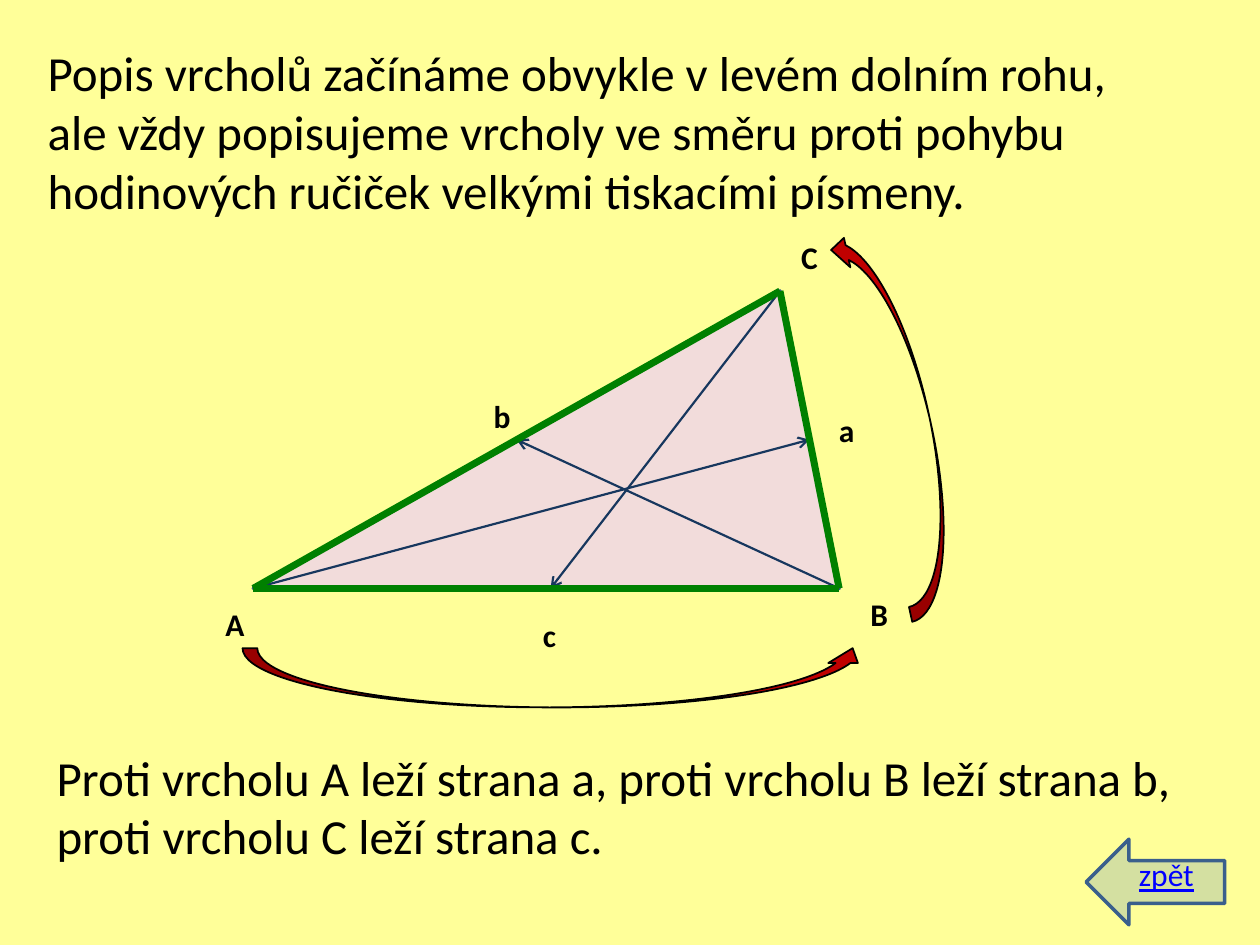
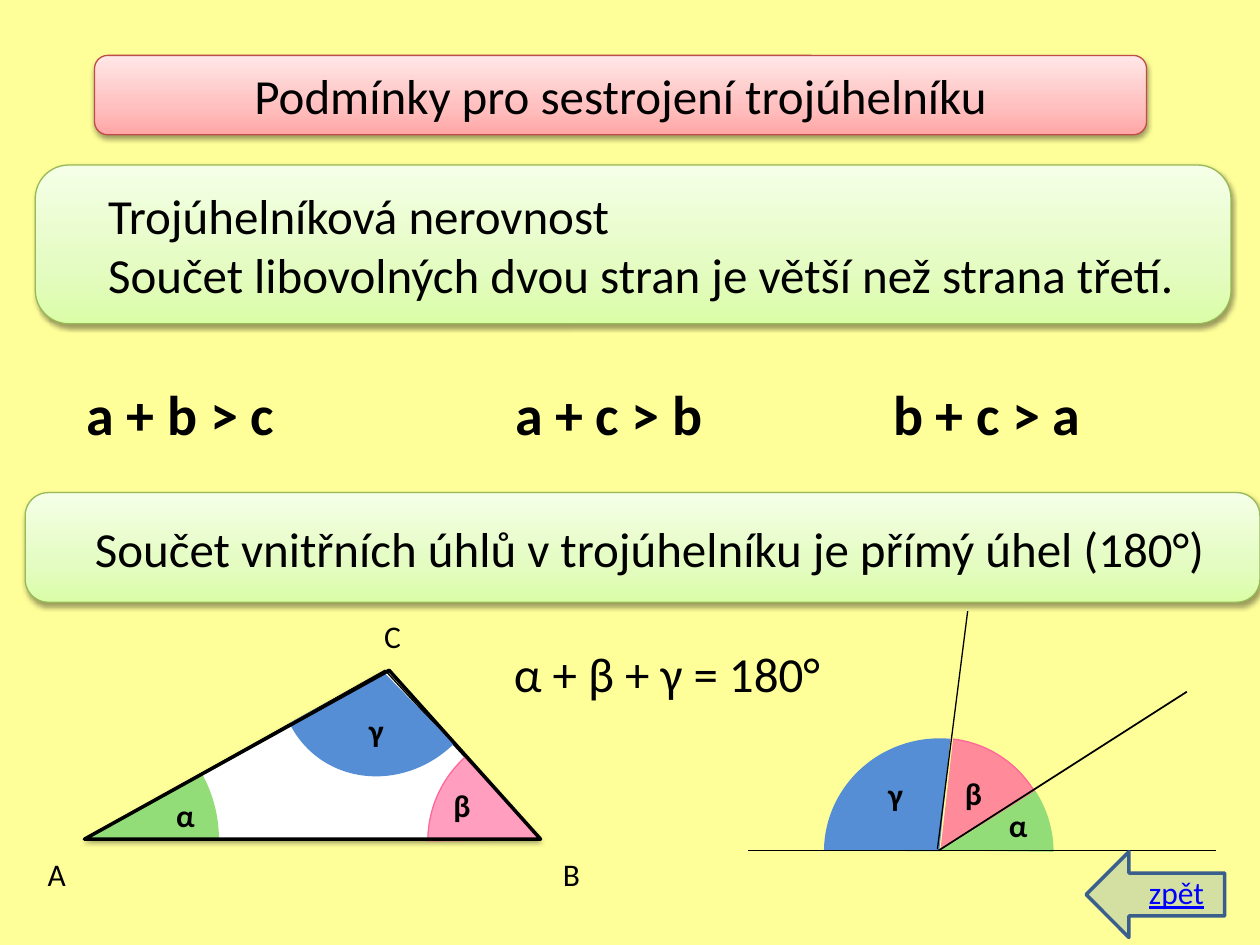
from lxml.etree import SubElement
from pptx import Presentation
from pptx.dml.color import RGBColor as RGB
from pptx.enum.shapes import MSO_CONNECTOR, MSO_SHAPE as SHAPE
from pptx.enum.text import MSO_ANCHOR, MSO_AUTO_SIZE as FIT, PP_ALIGN as ALIGN
from pptx.oxml.ns import qn
from pptx.util import Inches, Pt

FONT = "Calibri"
BODY, SMALL = 28, 18
CREAM = RGB(0xFF, 0xFF, 0x99)
BLACK = RGB(0, 0, 0)
WHITE = RGB(0xFF, 0xFF, 0xFF)
ROSE = RGB(0xF2, 0xDC, 0xDB)
RED = RGB(0xC0, 0, 0)
NAVY = RGB(0x17, 0x37, 0x5E)
STEEL = RGB(0x3A, 0x5F, 0x8C)
BLUE = RGB(0x4F, 0x81, 0xBD)
GREEN = RGB(0, 0x80, 0)
LINK = RGB(0, 0, 0xFF)
LIME = RGB(0x93, 0xDD, 0x79)
PINK = RGB(0xFF, 0x66, 0x99)
SKY = RGB(0x55, 0x8E, 0xD5)
RED_EDGE = RGB(0xBF, 0x4C, 0x48)
LIME_EDGE = RGB(0x98, 0xB9, 0x55)
RED_FADE = [(0, RGB(0xFF, 0xA6, 0xA5)), (35, RGB(0xFF, 0xC0, 0xBF)),
            (100, RGB(0xFF, 0xE7, 0xE7))]
LIME_FADE = [(0, RGB(0xDA, 0xFD, 0xA7)), (35, RGB(0xE4, 0xFC, 0xC2)),
             (100, RGB(0xF5, 0xFF, 0xE7))]


def child(node, tag, **attrs):
    return SubElement(node, qn("a:" + tag), {k: str(v) for k, v in attrs.items()})


def style(runs, size, bold=False, color=BLACK):
    for run in runs:
        font = run.font
        font.name, font.size, font.bold = FONT, Pt(size), bold
        font.color.rgb = color


def label(slide, text, x, y, w, h=0.4, size=SMALL, bold=False, color=BLACK, wrap=False):
    box = slide.shapes.add_textbox(*map(Inches, (x, y, w, h)))
    frame = box.text_frame
    frame.text = text
    frame.word_wrap = wrap
    frame.auto_size = FIT.SHAPE_TO_FIT_TEXT
    style(frame.paragraphs[0].runs, size, bold, color)
    return frame.paragraphs[0]


def form(slide, kind, box, fill, edge, width, adj=(), rot=0, alpha=None):
    """Add a preset shape; a fill of None leaves it hollow."""
    shape = slide.shapes.add_shape(kind, *map(Inches, box))
    shape.shadow.inherit = False
    shape.rotation = rot
    for i, value in enumerate(adj):
        shape.adjustments[i] = value
    if fill is None:
        shape.fill.background()
    else:
        shape.fill.solid()
        shape.fill.fore_color.rgb = fill
    if alpha:
        tone = shape._element.spPr.find(qn("a:solidFill"))[0]
        child(tone, "alpha", val=alpha * 1000)
    shape.line.color.rgb = edge
    shape.line.width = Pt(width)
    return shape


def shade(shape):
    """Cast a soft shadow straight down."""
    cast = child(shape._element.spPr.find(qn("a:effectLst")), "outerShdw",
                 blurRad=Pt(3.1), dist=Pt(1.6), dir=5400000, rotWithShape=0)
    child(child(cast, "srgbClr", val=BLACK), "alpha", val=38000)


def fade(shape, stops):
    """Swap the plain fill for a gradient that rises from the bottom."""
    old = shape._element.spPr.find(qn("a:solidFill"))
    grad = old.makeelement(qn("a:gradFill"), {"rotWithShape": "1"})
    items = child(grad, "gsLst")
    for pos, color in stops:
        child(child(items, "gs", pos=pos * 1000), "srgbClr", val=color)
    child(grad, "lin", ang=16200000, scaled=0)
    old.getparent().replace(old, grad)


def line(slide, start, end, color, width, arrow=False):
    link = slide.shapes.add_connector(MSO_CONNECTOR.STRAIGHT,
                                      *map(Inches, (*start, *end)))
    link.line.color.rgb = color
    link.line.width = Pt(width)
    child(link._element.spPr, "effectLst")
    if arrow:
        child(link.line._get_or_add_ln(), "tailEnd", type="arrow")


def panel(slide, box, rows, stops, edge, adj=(), right=0.1, level=1):
    shape = form(slide, SHAPE.ROUNDED_RECTANGLE, box, WHITE, edge, 0.75, adj)
    fade(shape, stops)
    shade(shape)
    frame = shape.text_frame
    frame.text = "\n".join(rows)
    frame.word_wrap = True
    frame.vertical_anchor = MSO_ANCHOR.MIDDLE
    frame.margin_left = Inches(0 if level else 0.1)
    frame.margin_right = Inches(right)
    for para in frame.paragraphs:
        para.level = level
        para.alignment = ALIGN.LEFT if level else ALIGN.CENTER
        style(para.runs, BODY)


def back(slide, x, y, dx, dy):
    form(slide, SHAPE.LEFT_ARROW, (x, y, 1.1, 0.68), BLUE, STEEL, 2, alpha=24)
    para = label(slide, "zpět", x + dx, y + dy, 0.64, color=LINK)
    para.runs[0].font.underline = True


def sweep(slide, box, rot):
    """Draw a curved arrow that turns counter-clockwise."""
    shape = form(slide, SHAPE.CURVED_RIGHT_ARROW, box, RED, BLACK, 1, rot=rot)
    frame = shape._element.spPr.find(qn("a:xfrm"))
    frame.set("flipH", "1")
    frame.set("flipV", "1")


def named(slide, x, y, w, h):
    """Draw the triangle with named corners, sides and arrows to the sides."""
    form(slide, SHAPE.ISOSCELES_TRIANGLE, (x, y, w, h), ROSE, STEEL, 2, [0.899])
    a, b, c = (x, y + h), (x + w, y + h), (x + 0.899 * w, y)
    sweep(slide, (x + 4.89, y - 0.53, 0.48, 3.14), 347.7)
    sweep(slide, (x + 2.16, y + 0.59, 0.47, 4.96), 90)
    mid = y + h / 2
    for start, end in ((a, ((b[0] + c[0]) / 2, mid)),
                       (b, ((a[0] + c[0]) / 2, mid)),
                       (c, (x + 2.36, y + h))):
        line(slide, start, end, NAVY, 1.25, arrow=True)
    for start, end in ((b, c), (a, b), (a, c)):
        line(slide, start, end, GREEN, 4)
    for text, dx, dy in (("A", -0.32, 2.44), ("B", 4.8, 2.36), ("C", 4.25, -0.47),
                         ("a", 4.55, 0.9), ("b", 1.81, 0.79), ("c", 2.2, 2.53)):
        label(slide, text, x + dx, y + dy, 0.34, bold=True)


def wedges(slide, x, y, parts):
    for color, box, adj, rot, width, alpha in parts:
        left, top, w, h = box
        form(slide, SHAPE.ARC, (x + left, y + top, w, h), color, color, width,
             adj, rot, alpha)


def greek(slide, x, y, spots):
    for text, dx, dy in spots:
        label(slide, text, x + dx, y + dy, 0.34, bold=True)


def angles(slide, x, y, w, h):
    """Draw the triangle with its three inner angles."""
    box = (x, y, w, h)
    shade(form(slide, SHAPE.ISOSCELES_TRIANGLE, box, WHITE, BLACK, 0.75, [0.659]))
    wedges(slide, x, y, [
        (LIME, (-1.05, 0.29, 2.1, 2.12), (181.88, 199.68), 27, 2.25, None),
        (PINK, (2.73, 0.45, 1.79, 1.8), (175.62, 205.14), 246.7, 0.75, 63),
        (SKY, (1.53, -0.77, 1.69, 1.57), (162.53, 10.15), 134.7, 1.5, None)])
    form(slide, SHAPE.ISOSCELES_TRIANGLE, box, None, BLACK, 2, [0.668])
    greek(slide, x, y, [("α", 0.63, 0.95), ("β", 2.83, 0.87), ("γ", 2.16, 0.27)])
    for text, dx, dy in (("A", -0.39, 1.42), ("B", 3.7, 1.42), ("C", 2.28, -0.47)):
        label(slide, text, x + dx, y + dy, 0.34)


def fan(slide, x, y):
    """Lay the three angles side by side around the point x, y."""
    wedges(slide, x, y, [
        (PINK, (-0.86, -0.89, 1.75, 1.76), (173.4, 205.14), 347.5, 0.75, 76),
        (SKY, (-0.88, -0.9, 1.77, 1.81), (165.33, 6.56), 264.7, 1.5, None),
        (LIME, (-0.87, -0.87, 1.77, 1.74), (180.54, 200.2), 27, 2.25, None)])
    greek(slide, x, y, [("β", 0.11, -0.66), ("α", 0.46, -0.4), ("γ", -0.5, -0.65)])
    line(slide, (x, y), (x + 1.97, y - 1.26), BLACK, 1)
    line(slide, (x - 0.01, y - 0.01), (x + 0.23, y - 1.9), BLACK, 0.75)
    line(slide, (x - 1.51, y), (x + 2.2, y), BLACK, 0.75)


def page(deck):
    slide = deck.slides.add_slide(deck.slide_layouts[6])
    slide.background.fill.solid()
    slide.background.fill.fore_color.rgb = CREAM
    return slide


def naming(deck):
    slide = page(deck)
    label(slide, "Popis vrcholů začínáme obvykle v levém dolním rohu, ale vždy "
          "popisujeme vrcholy ve směru proti pohybu hodinových ručiček velkými "
          "tiskacími písmeny.", 0.28, 0.29, 8.9, 1.51, BODY, wrap=True)
    label(slide, "Proti vrcholu A leží strana a, proti vrcholu B leží strana b, "
          "proti vrcholu C leží strana c.", 0.35, 5.88, 9.29, 1.04, BODY, wrap=True)
    named(slide, 2.01, 2.31, 4.65, 2.36)
    back(slide, 8.62, 6.66, 0.32, 0.08)


def rules(deck):
    slide = page(deck)
    panel(slide, (0.75, 0.44, 8.35, 0.63), ["Podmínky pro sestrojení trojúhelníku"],
          RED_FADE, RED_EDGE, level=0)
    panel(slide, (0.28, 1.31, 9.49, 1.26),
          ["Trojúhelníková nerovnost",
           "Součet libovolných dvou stran je větší než strana třetí."],
          LIME_FADE, LIME_EDGE, [0.211], right=0.12)
    panel(slide, (0.2, 3.91, 9.8, 0.87),
          ["Součet vnitřních úhlů v trojúhelníku je přímý úhel (180°)"],
          LIME_FADE, LIME_EDGE, [0.211])
    for text, x in (("a + b > c", 0.59), ("a + c > b", 3.99), ("b + c > a", 6.99)):
        label(slide, text, x, 2.96, 1.7, 0.64, 32, bold=True)
    angles(slide, 0.67, 5.32, 3.62, 1.34)
    label(slide, "α + β + γ = 180°", 3.98, 5.06, 2.68, 0.57, BODY)
    fan(slide, 7.45, 6.75)
    back(slide, 8.62, 6.76, 0.4, 0.12)


def main():
    deck = Presentation()
    deck.slide_width, deck.slide_height = Inches(10), Inches(7.5)
    naming(deck)
    rules(deck)
    deck.save("out.pptx")


if __name__ == "__main__":
    main()
